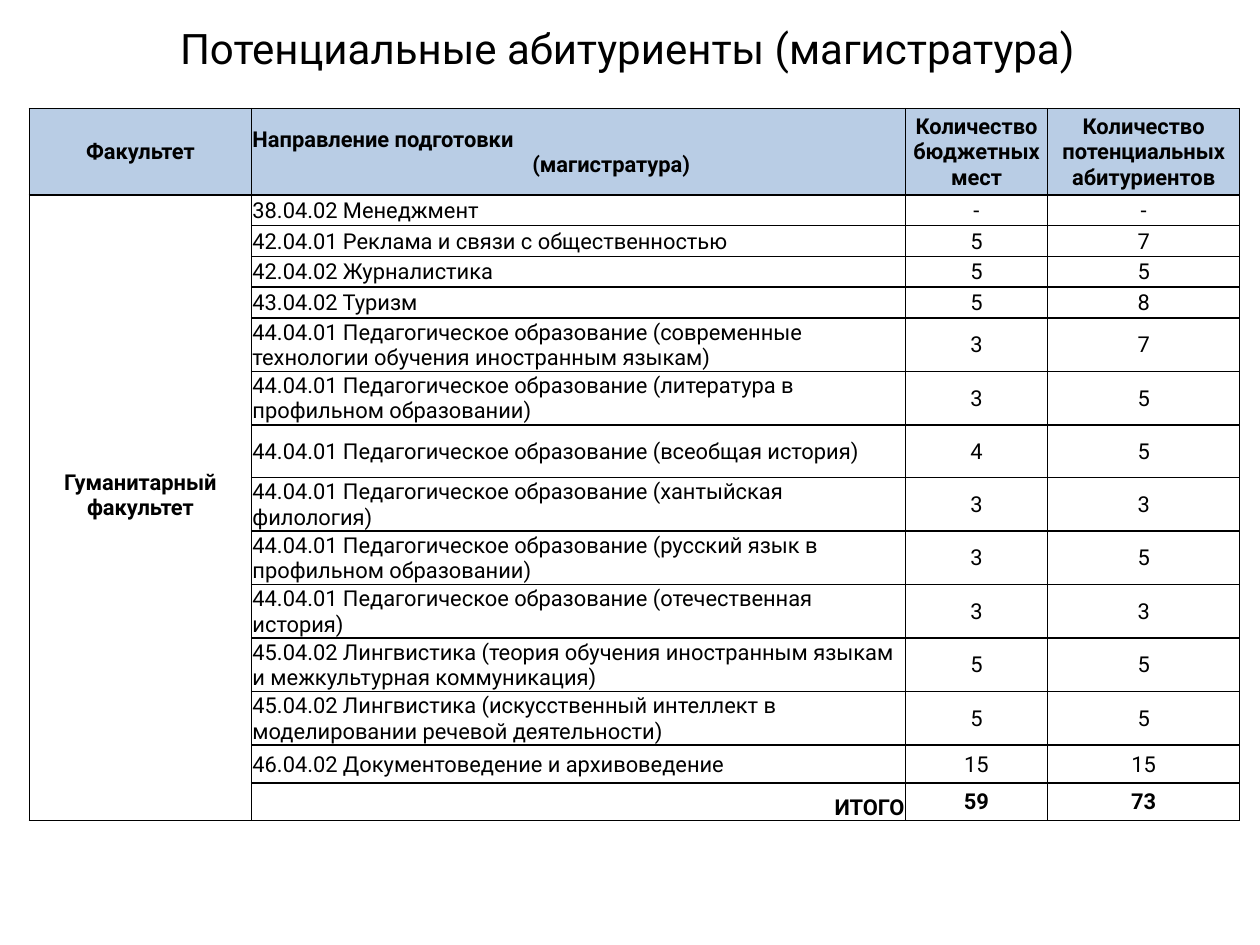
from lxml.etree import SubElement
from pptx import Presentation
from pptx.dml.color import RGBColor
from pptx.enum.text import MSO_ANCHOR as Anchor, PP_ALIGN as Align
from pptx.oxml.ns import qn
from pptx.util import Cm, Pt

BLACK = RGBColor(0x00, 0x00, 0x00)
HEADER_BLUE = RGBColor(0xB9, 0xCD, 0xE5)

COLUMN_WIDTHS = [4.48, 13.18, 2.87, 3.87]
ROW_HEIGHTS = [1.74] + [0.62] * 4 + [1.06] * 8 + [0.76] * 2

HEADINGS = [
    "Факультет",
    "Направление подготовки\n(магистратура)",
    "Количество бюджетных мест",
    "Количество потенциальных абитуриентов",
]
PROGRAMMES = [
    ("38.04.02 Менеджмент", "-", "-"),
    ("42.04.01 Реклама и связи с общественностью", "5", "7"),
    ("42.04.02 Журналистика", "5", "5"),
    ("43.04.02 Туризм", "5", "8"),
    ("44.04.01 Педагогическое образование (современные технологии обучения иностранным языкам)", "3", "7"),
    ("44.04.01 Педагогическое образование (литература в профильном образовании)", "3", "5"),
    ("44.04.01 Педагогическое образование (всеобщая история)", "4", "5"),
    ("44.04.01 Педагогическое образование (хантыйская филология)", "3", "3"),
    ("44.04.01 Педагогическое образование (русский язык в профильном образовании)", "3", "5"),
    ("44.04.01 Педагогическое образование (отечественная история)", "3", "3"),
    ("45.04.02 Лингвистика (теория обучения иностранным языкам и межкультурная коммуникация)", "5", "5"),
    ("45.04.02 Лингвистика (искусственный интеллект в моделировании речевой деятельности)", "5", "5"),
    ("46.04.02 Документоведение и архивоведение", "15", "15"),
]
TOTALS = ("ИТОГО", "59", "73")


class AdmissionsSlide:
    font_name = "Roboto"
    title_size = Pt(24)
    table_size = Pt(12.5)
    border_width = Pt(1)

    def __init__(self, slide):
        self.slide = slide

    def set_text(self, frame, text, size, align, bold=False):
        frame.text = text
        for paragraph in frame.paragraphs:
            paragraph.alignment = align
            for run in paragraph.runs:
                run.font.name = self.font_name
                run.font.size = size
                run.font.bold = bold
                run.font.color.rgb = BLACK

    def title(self, text, left, top, width, height):
        heading = self.slide.shapes.add_textbox(Cm(left), Cm(top), Cm(width), Cm(height))
        frame = heading.text_frame
        frame.word_wrap = True
        frame.vertical_anchor = Anchor.MIDDLE
        self.set_text(frame, text, self.title_size, Align.CENTER)

    def table(self, left, top, widths, heights):
        grid = self.slide.shapes.add_table(
            len(heights), len(widths), Cm(left), Cm(top), Cm(sum(widths)), Cm(sum(heights))
        ).table
        for column, width in zip(grid.columns, widths):
            column.width = Cm(width)
        for row, height in zip(grid.rows, heights):
            row.height = Cm(height)
        for cell in grid.iter_cells():
            self.border(cell)
            cell.fill.background()
            cell.margin_left = cell.margin_right = cell.margin_top = Cm(0.02)
            cell.margin_bottom = 0
            cell.vertical_anchor = Anchor.MIDDLE
        return grid

    def border(self, cell):
        properties = cell._tc.get_or_add_tcPr()
        for side in ("a:lnL", "a:lnR", "a:lnT", "a:lnB"):
            line = SubElement(properties, qn(side), w=str(self.border_width))
            fill = SubElement(line, qn("a:solidFill"))
            SubElement(fill, qn("a:srgbClr"), val=str(BLACK))

    def cell(self, cell, text, align=Align.CENTER, bold=False):
        self.set_text(cell.text_frame, text, self.table_size, align, bold)


def main():
    deck = Presentation()
    deck.slide_width, deck.slide_height = Cm(25.4), Cm(19.05)
    page = AdmissionsSlide(deck.slides.add_slide(deck.slide_layouts[6]))

    page.title("Потенциальные абитуриенты (магистратура)", 0, 0, 25.3, 1.93)
    admissions = page.table(0.59, 2.19, COLUMN_WIDTHS, ROW_HEIGHTS)

    # Header row
    for column, heading in enumerate(HEADINGS):
        header = admissions.cell(0, column)
        page.cell(header, heading, bold=True)
        header.fill.solid()
        header.fill.fore_color.rgb = HEADER_BLUE
    direction, level = admissions.cell(0, 1).text_frame.paragraphs
    direction.alignment = Align.LEFT
    level._p.get_or_add_pPr().set("marL", str(Cm(1.32)))

    # Faculty, set slightly above the middle of its rows
    faculty = admissions.cell(1, 0)
    faculty.merge(admissions.cell(len(ROW_HEIGHTS) - 1, 0))
    page.cell(faculty, "Гуманитарный факультет", bold=True)
    faculty.margin_bottom = Cm(0.52)

    # Programmes and totals
    for row, (name, *counts) in enumerate(PROGRAMMES + [TOTALS], start=1):
        is_total = row > len(PROGRAMMES)
        page.cell(admissions.cell(row, 1), name, Align.RIGHT if is_total else Align.LEFT, is_total)
        for column, count in enumerate(counts, start=2):
            page.cell(admissions.cell(row, column), count, bold=is_total)
    admissions.cell(len(ROW_HEIGHTS) - 1, 1).vertical_anchor = Anchor.BOTTOM

    deck.save("out.pptx")


if __name__ == "__main__":
    main()
